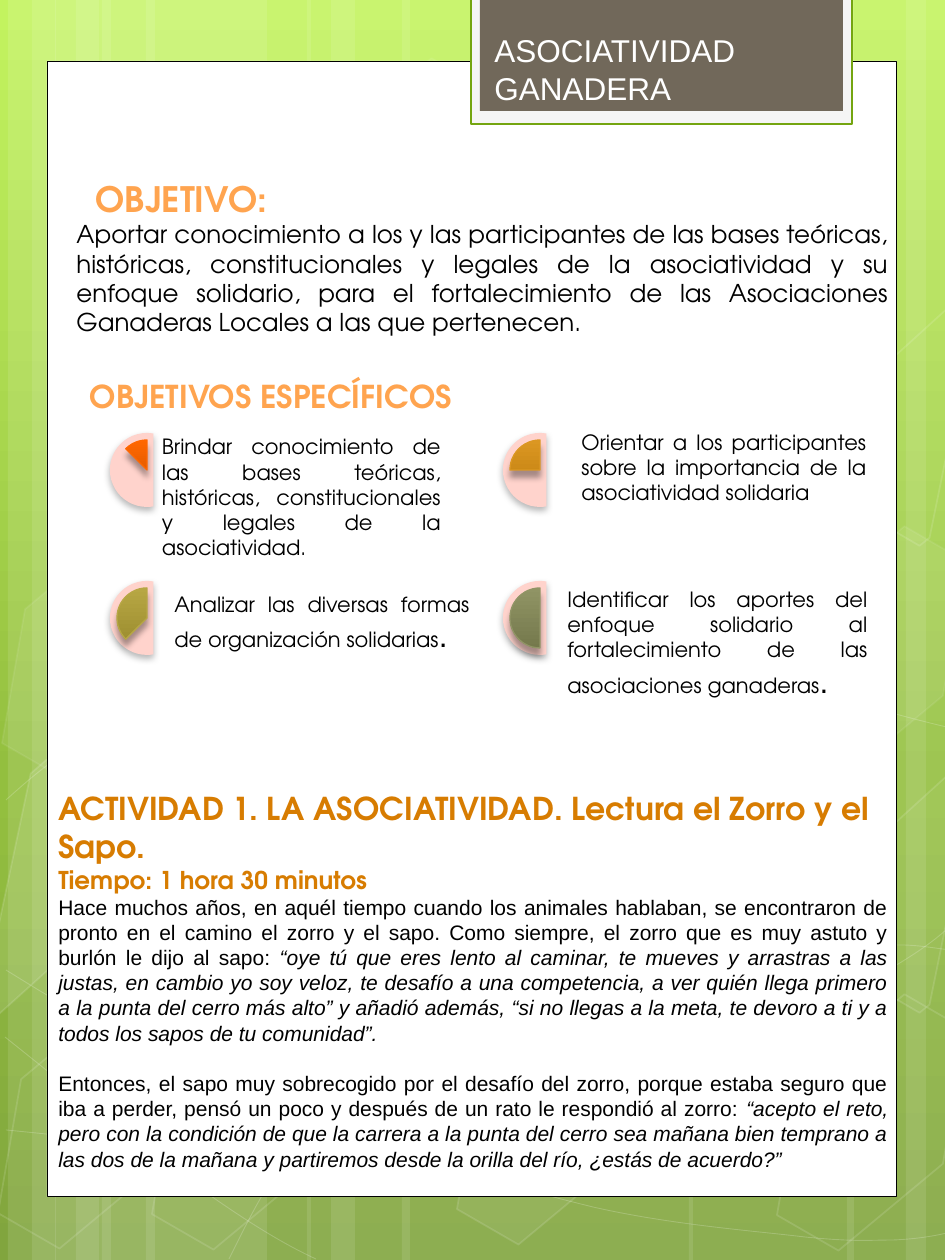
import math
from lxml import etree
from pptx import Presentation
from pptx import util as u
from pptx.dml.color import RGBColor
from pptx.enum import shapes, text
from pptx.oxml.ns import qn

SCALE = 914400 / 126
KIND = shapes.MSO_SHAPE
ALIGN = text.PP_ALIGN
WHITE = RGBColor(255, 255, 255)
BLACK = RGBColor(0, 0, 0)
PALE = RGBColor(0xF5, 0xF5, 0xF5)
GREEN = RGBColor(0x74, 0xA5, 0x10)
BROWN = RGBColor(0x71, 0x68, 0x5A)
ORANGE = RGBColor(0xD7, 0x7C, 0x01)
PINK = RGBColor(0xFF, 0xD3, 0xCC)
BACKDROP = [(0, RGBColor(0xC3, 0xF3, 0x5F)), (62, RGBColor(0x93, 0xBF, 0x3F)),
            (100, RGBColor(0x81, 0xA5, 0x3E))]
GLOW = [(0, RGBColor(0x8F, 0x52, 0x00)), (78, RGBColor(0xFF, 0xA4, 0x4F)),
        (100, RGBColor(0xFF, 0xF6, 0xF1))]

ADVENTOR = "TeX Gyre Adventor"
TITLE = {"name": "Arial", "size": u.Pt(18), "color": WHITE}
HEADING = {"name": ADVENTOR, "size": u.Pt(18), "bold": True, "color": GLOW}
MAIN_HEADING = {**HEADING, "size": u.Pt(20)}
GOAL = {"name": ADVENTOR, "size": u.Pt(12), "color": BLACK}
INTRO = {**GOAL, "size": u.Pt(14)}
DOT = {"name": "Arial", "size": u.Pt(18), "color": BLACK}
ACTIVITY = {**HEADING, "color": ORANGE}
TIME = {**ACTIVITY, "size": u.Pt(14)}
STORY = {"name": "Arial", "size": u.Pt(12), "color": BLACK}
QUOTE = {**STORY, "italic": True}
JUSTIFY = {"alignment": ALIGN.JUSTIFY}

BANDS = [(102, 165), (8, 48), (32, 79), (146, 165), (55, 44), (76, 79),
         (689, 165), (906, 48), (847, 79), (402, 291), (307, 48), (331, 79)]
CURVES = [
    [(6, 1130), (58, 1135), (108, 1142), (180, 1139), (251, 1137), (338, 1134), (432, 1118),
     (528, 1100), (662, 1068), (748, 1036), (834, 1004), (924, 954), (951, 925)],
    [(6, 800), (34, 775), (62, 750), (115, 725), (169, 699), (244, 663), (329, 650),
     (412, 638), (514, 638), (617, 650), (722, 663), (895, 716), (951, 728)],
    [(5, 1037), (120, 1129), (233, 1221), (316, 1259)],
    [(6, 970), (37, 989), (66, 1008), (121, 1034), (176, 1061), (258, 1101), (336, 1130),
     (416, 1159), (515, 1188), (593, 1207), (672, 1225), (756, 1231), (805, 1237),
     (856, 1242), (868, 1240), (893, 1240), (917, 1239), (935, 1236), (951, 1232)],
    [(229, 1259), (246, 1225), (262, 1192), (285, 1160), (309, 1130), (340, 1096), (367, 1074),
     (393, 1051), (408, 1041), (444, 1023), (479, 1005), (542, 981), (575, 970),
     (609, 960), (614, 960), (643, 955), (672, 951), (718, 946), (751, 945),
     (782, 942), (838, 945), (838, 945), (838, 945), (900, 945), (900, 945),
     (917, 945), (934, 948), (942, 949), (950, 950), (950, 950), (950, 951)]]
HEXAGONS = [(316, 59, 4, 8), (469, 989, 6, 12), (10, 993, None, 12), (14, 523, 7, 8),
            (88, 759, None, 12), (164, 994, None, 12), (91, 287, None, 12),
            (712, 761, 10, 12), (789, 995, None, 12), (789, 527, 7, 8)]
LEFT_PIECE = [(31, 774), (47, 760), (118, 801), (91, 932), (-9, 1022), (-20, 1016)]
RIGHT_PIECE = [(876, 840), (974, 751), (980, 755), (929, 1005), (919, 1013), (847, 971)]
DIALS = [(110, 433, 135, RGBColor(0xFF, 0x67, 0x00), RGBColor(0xCB, 0x52, 0x00)),
         (503, 433, 108, RGBColor(0xDB, 0x97, 0x22), RGBColor(0xBD, 0x7C, 0x0C)),
         (110, 581, 81, RGBColor(0xB7, 0xA7, 0x44), RGBColor(0x9A, 0x8B, 0x2D)),
         (503, 581, 54, RGBColor(0x90, 0x94, 0x65), RGBColor(0x75, 0x79, 0x4C))]


def px(value):
    return u.Emu(round(value * SCALE))


def child(parent, tag, **values):
    node = etree.SubElement(parent, qn(tag))
    for key, value in values.items():
        node.set(key, str(value))
    return node


def set_gradient(fill, root, stops):
    fill.gradient()
    node = root.find(".//" + qn("a:gradFill"))
    stop_list = node.find(qn("a:gsLst"))
    for stop in list(stop_list):
        stop_list.remove(stop)
    for place, color in stops:
        child(child(stop_list, "a:gs", pos=place * 1000), "a:srgbClr", val=color)
    node.find(qn("a:lin")).set("ang", "5400000")


def paint(shape, fill=None, line=None, width=1, fill_alpha=None, line_alpha=None):
    shape.shadow.inherit = False
    for target, color, alpha in ((shape.fill, fill, fill_alpha), (shape.line.fill, line, line_alpha)):
        if color is None:
            target.background()
            continue
        if isinstance(color, list):
            set_gradient(target, shape._element.spPr, color)
            continue
        target.solid()
        target.fore_color.rgb = color
        if alpha:
            holder = shape._element.spPr
            if target is not shape.fill:
                holder = holder.find(qn("a:ln"))
            child(holder.find(qn("a:solidFill")).find(qn("a:srgbClr")), "a:alpha", val=alpha * 1000)
    if line is not None:
        shape.line.width = u.Pt(width)


def add_figure(page, kind, area, adjustments=(), rotation=0, **look):
    shape = page.shapes.add_shape(kind, *map(px, area))
    for index, value in enumerate(adjustments):
        shape.adjustments[index] = value
    shape.rotation = rotation
    paint(shape, **look)
    return shape


def add_outline(page, points, closed, **look):
    spots = [(px(x), px(y)) for x, y in points]
    builder = page.shapes.build_freeform(*spots[0])
    builder.add_line_segments(spots[1:], close=closed)
    shape = builder.convert_to_shape()
    paint(shape, **look)
    return shape


def add_curve(page, knots):
    shape = add_outline(page, knots[::3], False, line=WHITE, width=0.5, line_alpha=20)
    segments = shape._element.findall(".//" + qn("a:lnTo"))
    for index, segment in enumerate(segments):
        start, *controls = knots[3 * index:3 * index + 4]
        if controls[0] == start:
            continue
        segment.tag = qn("a:cubicBezTo")
        segment.remove(segment[0])
        for x, y in controls:
            child(segment, "a:pt", x=px(x) - shape.left, y=px(y) - shape.top)


def add_piece(page, center, points, **look):
    cos, sin = math.cos(math.radians(30)), math.sin(math.radians(30))
    offsets = [(x - center[0], y - center[1]) for x, y in points]
    upright = [(center[0] + x * cos + y * sin, center[1] - x * sin + y * cos) for x, y in offsets]
    add_outline(page, upright, True, line=WHITE, line_alpha=12, **look).rotation = 30


def add_shadow(shape, alpha, blur, distance):
    effects = shape._element.spPr.find(qn("a:effectLst"))
    shadow = child(effects, "a:outerShdw", blurRad=u.Pt(blur), dist=u.Pt(distance),
                   dir=5400000, rotWithShape=0)
    child(child(shadow, "a:srgbClr", val=BLACK), "a:alpha", val=alpha * 1000)


def add_dial(page, left, top, start, light, dark):
    chord = add_figure(page, KIND.CHORD, (left, top, 74, 74), (48, 168), fill=PINK)
    add_shadow(chord, 28, 4, 2)
    pie = add_figure(page, KIND.PIE, (left + 7, top + 7, 60, 60), (start, 162),
                     fill=[(0, light), (100, dark)], line=light, width=0.75)
    add_shadow(pie, 34, 3.5, 4)


def write(box, paragraphs, **frame_values):
    frame = box.text_frame
    for key, value in {"word_wrap": True, "auto_size": text.MSO_AUTO_SIZE.NONE, **frame_values}.items():
        setattr(frame, key, value)
    for index, (layout, spans) in enumerate(paragraphs):
        para = frame.add_paragraph() if index else frame.paragraphs[0]
        for key, value in layout.items():
            if key == "margin":
                para._p.get_or_add_pPr().set("marL", str(px(value)))
            else:
                setattr(para, key, value)
        for words, style in spans:
            span = para.add_run()
            span.text = words
            for key, value in style.items():
                if key != "color":
                    setattr(span.font, key, value)
            if isinstance(style["color"], list):
                set_gradient(span.font.fill, span._r, style["color"])
            else:
                span.font.color.rgb = style["color"]


def add_text(page, area, paragraphs, **frame_values):
    write(page.shapes.add_textbox(*map(px, area)), paragraphs, **frame_values)


def add_backdrop(page):
    set_gradient(page.background.fill, page._element, BACKDROP)
    for left, width in BANDS:
        add_figure(page, KIND.RECTANGLE, (left, 0, width, 1260), fill=WHITE, fill_alpha=10)
    for knots in CURVES:
        add_curve(page, knots)
    for left, top, fill_alpha, line_alpha in HEXAGONS:
        add_figure(page, KIND.HEXAGON, (left, top, 165, 255), (0.285, 1.155), 30,
                   fill=WHITE if fill_alpha else None, fill_alpha=fill_alpha,
                   line=WHITE, line_alpha=line_alpha)
    add_piece(page, (33, 900), LEFT_PIECE, fill=WHITE, fill_alpha=10)
    add_piece(page, (931, 872), RIGHT_PIECE, fill=WHITE, fill_alpha=4)
    add_piece(page, (931, 405), [(x, y - 467) for x, y in RIGHT_PIECE])
    add_figure(page, KIND.RECTANGLE, (47, 61, 850, 1136), fill=WHITE, line=BLACK, width=0.5)
    add_figure(page, KIND.RECTANGLE, (471, -4, 381, 128), fill=PALE, line=GREEN, width=1.25)
    add_figure(page, KIND.RECTANGLE, (480, -4, 363, 115), fill=BROWN)


def add_goals(page):
    for dial in DIALS:
        add_dial(page, *dial)
    panel = add_outline(page, [(162, 434), (441, 434), (441, 561), (162, 561)], True)
    write(panel, [(JUSTIFY, [("Brindar conocimiento de las bases teóricas, históricas, constitucionales y legales de la asociatividad.", GOAL)])],
          margin_left=0, margin_top=0, margin_right=0, margin_bottom=0,
          vertical_anchor=text.MSO_ANCHOR.TOP)
    add_text(page, (569, 390, 310, 121), [(JUSTIFY, [("Orientar a los participantes sobre la importancia de la asociatividad solidaria", GOAL)])],
             vertical_anchor=text.MSO_ANCHOR.BOTTOM)
    add_text(page, (162, 585, 320, 77), [(JUSTIFY, [("Analizar las diversas formas de organización solidarias", GOAL), (".", DOT)])])
    add_text(page, (555, 580, 325, 127), [(JUSTIFY, [("Identificar los aportes del enfoque solidario al fortalecimiento de las asociaciones ganaderas", GOAL), (".", DOT)])])


def main():
    deck = Presentation()
    deck.slide_width, deck.slide_height = px(945), px(1260)
    page = deck.slides.add_slide(deck.slide_layouts[6])
    add_backdrop(page)
    add_text(page, (482, 25, 367, 89), [({}, [("ASOCIATIVIDAD GANADERA", TITLE)])])
    add_text(page, (64, 171, 837, 208), [
        ({"margin": 19}, [("OBJETIVO:", MAIN_HEADING)]),
        (JUSTIFY, [("Aportar conocimiento a los y las participantes de las bases teóricas, históricas, constitucionales y legales de la asociatividad y su enfoque solidario, para el fortalecimiento de las Asociaciones Ganaderas Locales a las que pertenecen.", INTRO)])])
    add_text(page, (46, 371, 450, 50), [({"alignment": ALIGN.CENTER}, [("OBJETIVOS ESPECÍFICOS", HEADING)])])
    add_goals(page)
    add_text(page, (46, 783, 855, 476), [
        ({}, [("ACTIVIDAD 1. LA ASOCIATIVIDAD. Lectura el Zorro y el Sapo.", ACTIVITY)]),
        ({}, [("Tiempo: 1 hora 30 minutos", TIME)]),
        ({**JUSTIFY, "space_after": u.Pt(14.4)}, [
            ("Hace muchos años, en aquél tiempo cuando los animales hablaban, se encontraron de pronto en el camino el zorro y el sapo. Como siempre, el zorro que es muy astuto y burlón le dijo al sapo: ", STORY),
            ("“oye tú que eres lento al caminar, te mueves y arrastras a las justas, en cambio yo soy veloz, te desafío a una competencia, a ver quién llega primero a la punta del cerro más alto” y añadió además, “si no llegas a la meta, te devoro a ti y a todos los sapos de tu comunidad”.", QUOTE)]),
        (JUSTIFY, [
            ("Entonces, el sapo muy sobrecogido por el desafío del zorro, porque estaba seguro que iba a perder, pensó un poco y después de un rato le respondió al zorro: ", STORY),
            ("“acepto el reto, pero con la condición de que la carrera a la punta del cerro sea mañana bien temprano a las dos de la mañana y partiremos desde la orilla del río, ¿estás de acuerdo?”", QUOTE)])])
    deck.save("out.pptx")


if __name__ == "__main__":
    main()
